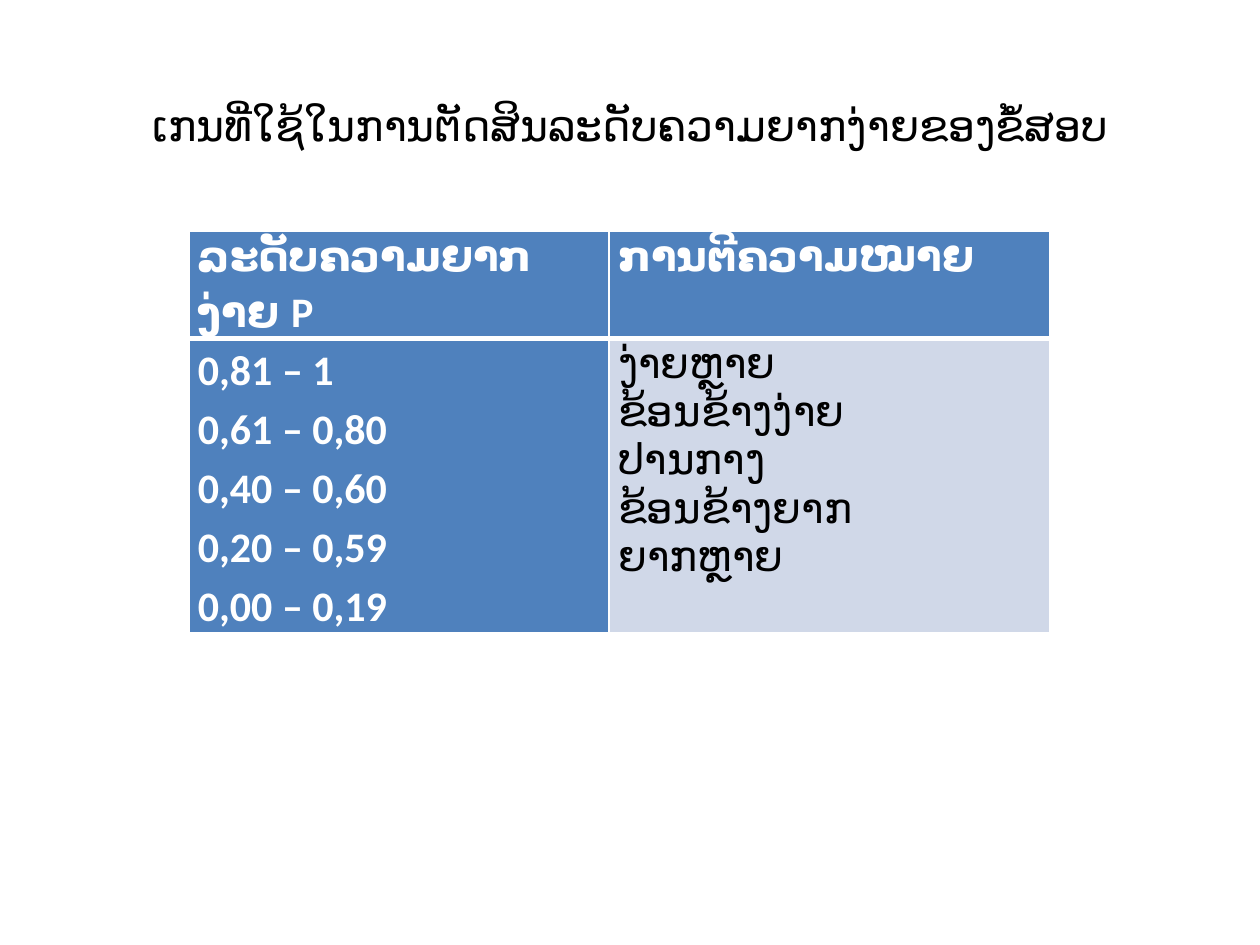
from lxml import etree
from pptx import Presentation
from pptx.dml.color import RGBColor
from pptx.enum.text import MSO_ANCHOR, MSO_AUTO_SIZE, PP_ALIGN
from pptx.oxml.ns import qn
from pptx.util import Cm, Pt

CENTER, LEFT = PP_ALIGN.CENTER, PP_ALIGN.LEFT
MIDDLE, TOP = MSO_ANCHOR.MIDDLE, MSO_ANCHOR.TOP
NO_FIT = MSO_AUTO_SIZE.NONE

TITLE = "ເກນທີ່ໃຊ້ໃນການຕັດສິນລະດັບຄວາມຍາກງ່າຍຂອງຂໍ້ສອບ"
HEADS = ("ລະດັບຄວາມຍາກງ່າຍ P", "ການຕີຄວາມໝາຍ")
LEVELS = (
    ("0,81 – 1", "ງ່າຍຫຼາຍ"),
    ("0,61 – 0,80", "ຂ້ອນຂ້າງງ່າຍ"),
    ("0,40 – 0,60", "ປານກາງ"),
    ("0,20 – 0,59", "ຂ້ອນຂ້າງຍາກ"),
    ("0,00 – 0,19", "ຍາກຫຼາຍ"),
)
THEME = {
    "font": "Calibri", "title": 24.3, "body": 24,
    "dark": "000000", "light": "FFFFFF", "blue": "4F81BD", "pale": "D0D8E8",
}
WIDTHS = (8.47, 8.89)
HEIGHTS = (2.13, 5.94)


def write(frame, lines, size, color, bold=False, align=LEFT, space=1.0):
    frame.word_wrap = True
    for i, line in enumerate(lines):
        par = frame.paragraphs[0] if i == 0 else frame.add_paragraph()
        par.alignment = align
        par.line_spacing = space
        run = par.add_run()
        run.text = line
        font = run.font
        font.name, font.size, font.bold = THEME["font"], Pt(size), bold
        font.color.rgb = RGBColor.from_string(color)


def edge(cell, side, width, color):
    """Add a border line; lines must come before the fill in the cell XML."""
    line = etree.Element(qn(f"a:ln{side}"), w=str(Pt(width)))
    fill = etree.SubElement(line, qn("a:solidFill"))
    etree.SubElement(fill, qn("a:srgbClr"), val=color)
    cell._tc.get_or_add_tcPr().append(line)


def dress(cell, lines, fill, color, bold, top, bottom):
    cell.margin_left = cell.margin_right = Cm(0.18)
    cell.margin_top = cell.margin_bottom = 0
    cell.vertical_anchor = TOP
    for side, width in (("L", 1), ("R", 1), ("T", top), ("B", bottom)):
        edge(cell, side, width, THEME["light"])
    cell.fill.solid()
    cell.fill.fore_color.rgb = RGBColor.from_string(fill)
    write(cell.text_frame, lines, THEME["body"], color, bold, space=1.15)


def main():
    deck = Presentation()
    deck.slide_width, deck.slide_height = Cm(25.4), Cm(19.05)
    slide = deck.slides.add_slide(deck.slide_layouts[5])

    title = slide.shapes.title
    title.left, title.top = Cm(1.27), Cm(1.7)
    title.width, title.height = Cm(22.86), Cm(3.18)
    frame = title.text_frame
    frame.auto_size = NO_FIT
    frame.vertical_anchor = MIDDLE
    frame.margin_bottom = Cm(1.7)
    write(frame, [TITLE], THEME["title"], THEME["dark"], align=CENTER)

    table = slide.shapes.add_table(
        2, 2, Cm(3.81), Cm(4.66), Cm(sum(WIDTHS)), Cm(sum(HEIGHTS))).table
    for row, height in zip(table.rows, HEIGHTS):
        row.height = Cm(height)
    for i, width in enumerate(WIDTHS):
        table.columns[i].width = Cm(width)
        dress(table.cell(0, i), [HEADS[i]], THEME["blue"], THEME["light"],
              True, 1, 3)
        first = i == 0
        dress(table.cell(1, i), [level[i] for level in LEVELS],
              THEME["blue" if first else "pale"],
              THEME["light" if first else "dark"], first, 3, 1)

    deck.save("out.pptx")


if __name__ == "__main__":
    main()
